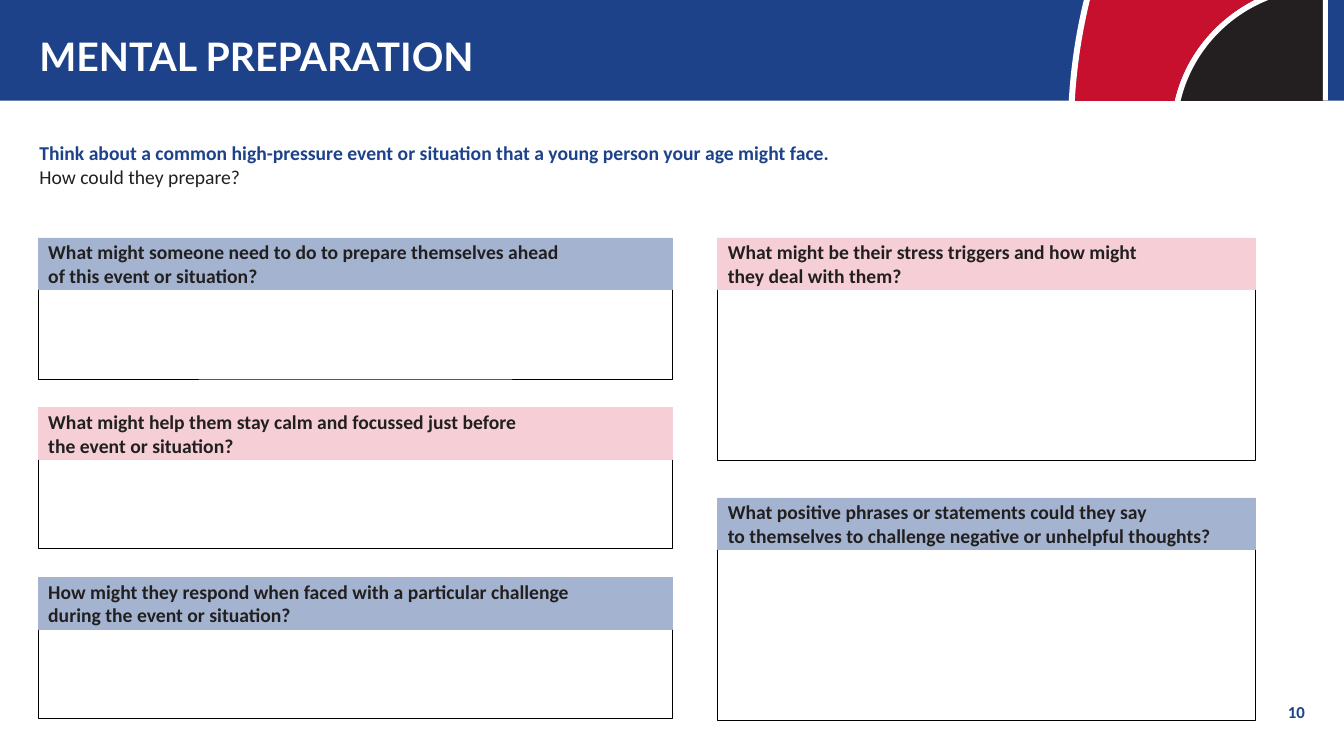
import pptx
import pptx.util
import pptx.dml.color
import pptx.enum.shapes
import pptx.enum.text
import pptx.oxml.ns
import lxml.etree

Inches, Pt = pptx.util.Inches, pptx.util.Pt
ALIGN, ANCHOR = pptx.enum.text.PP_ALIGN, pptx.enum.text.MSO_ANCHOR
qn = pptx.oxml.ns.qn

COLOURS = {
    "navy": "1D428A", "red": "C7102E", "black": "231F20", "white": "FFFFFF",
    "blue": "A4B4D0", "pink": "F5CFD5", "ink": "221F20", "outline": "000000",
}
SLIDE_WIDTH, SLIDE_HEIGHT = 13.33, 7.5
BAND_HEIGHT = 1
INDENT = 0.39
HEADER_HEIGHT = 0.51

# Each column: left, width, first and last header top, answer height, questions
COLUMNS = [
    (0.38, 6.29, 2.36, 5.73, 0.89, [
        ("blue", ["What might someone need to do to prepare themselves ahead ",
                  "of this event or situation?"]),
        ("pink", ["What might help them stay calm and focussed just before ",
                  "the event or situation?"]),
        ("blue", ["How might they respond when faced with a particular challenge ",
                  "during the event or situation?"]),
    ]),
    (7.12, 5.33, 2.36, 4.94, 1.7, [
        ("pink", ["What might be their stress triggers and how might ",
                  "they deal with them?"]),
        ("blue", ["What positive phrases or statements could they say ",
                  "to themselves to challenge negative or unhelpful thoughts?"]),
    ]),
]


def rgb(name):
    return pptx.dml.color.RGBColor.from_string(COLOURS[name])


def paint(shape, fill, line=None):
    shape.shadow.inherit = False
    shape.fill.solid()
    shape.fill.fore_color.rgb = rgb(fill)
    if line:
        shape.line.color.rgb = rgb(line)
        shape.line.width = Pt(0.5)
    else:
        shape.line.fill.background()


def add_box(page, left, top, width, height, fill, line=None):
    box = page.shapes.add_shape(
        pptx.enum.shapes.MSO_SHAPE.RECTANGLE,
        Inches(left), Inches(top), Inches(width), Inches(height))
    paint(box, fill, line)
    return box


def place(shape, left, top, width, height):
    shape.left, shape.top = Inches(left), Inches(top)
    shape.width, shape.height = Inches(width), Inches(height)


def set_frame(shape, anchor, left, top, right, bottom):
    frame = shape.text_frame
    frame.word_wrap = True
    frame.auto_size = pptx.enum.text.MSO_AUTO_SIZE.NONE
    frame.vertical_anchor = anchor
    frame.margin_left, frame.margin_top = Inches(left), Inches(top)
    frame.margin_right, frame.margin_bottom = Inches(right), Inches(bottom)
    return frame


def add_span(para, text, size, colour, bold=True, font="Calibri"):
    span = para.add_run()
    span.text = text
    span.font.name, span.font.size = font, Pt(size)
    span.font.bold = bold
    span.font.color.rgb = rgb(colour)


def shift(points, distance):
    return [(x + distance, y) for x, y in points]


def bend(shape, segment, points):
    """Turn a straight segment into a cubic curve through the given points."""
    cubic = lxml.etree.Element(qn("a:cubicBezTo"))
    for x, y in points:
        lxml.etree.SubElement(cubic, qn("a:pt"), x=str(Inches(x) - shape.left),
                              y=str(Inches(y) - shape.top))
    segment.getparent().replace(segment, cubic)


def add_sweep(page, left_edge, right_edge, fill):
    """Fill the area between two edges that both run from top to bottom."""
    corners = [left_edge[0], left_edge[-1], right_edge[-1], right_edge[0]]
    outline = [(Inches(x), Inches(y)) for x, y in corners]
    builder = page.shapes.build_freeform(*outline[0], scale=1.0)
    builder.add_line_segments(outline[1:], close=True)
    sweep = builder.convert_to_shape()
    segments = list(sweep.element.iter(qn("a:lnTo")))
    for segment, edge in ((segments[0], left_edge), (segments[2], right_edge[::-1])):
        if len(edge) == 4:
            bend(sweep, segment, edge[1:])
    paint(sweep, fill)


def add_band(page):
    add_box(page, 0, 0, SLIDE_WIDTH, BAND_HEIGHT, "navy")
    # Curved edges: top, two control points, bottom
    outer = [(10.81, 0), (10.73, 0.33), (10.68, 0.66), (10.66, 1)]
    middle = [(12.44, 0), (12.05, 0.2), (11.75, 0.56), (11.65, 1)]
    inner = [(12.58, 0), (12.15, 0.17), (11.82, 0.54), (11.71, 1)]
    add_sweep(page, shift(inner, -0.04), [(13.17, 0), (13.17, 1)], "black")
    add_sweep(page, middle, inner, "white")
    add_sweep(page, outer, middle, "red")
    add_sweep(page, shift(outer, -0.06), outer, "white")
    add_box(page, 13.12, 0, 0.05, BAND_HEIGHT, "white")


def fill_title(page):
    title = page.shapes.title
    page.shapes.element.append(title.element)  # bring in front of the band
    place(title, 0, 0.23, 10.59, 0.77)
    para = set_frame(title, ANCHOR.MIDDLE, INDENT, 0, 0, 0).paragraphs[0]
    para.alignment = ALIGN.LEFT
    para.line_spacing = Pt(25)
    add_span(para, "MENTAL PREPARATION", 28, "white", font="Lato")


def fill_intro(page):
    body = page.placeholders[1]
    page.shapes.element.append(body.element)
    place(body, 0, BAND_HEIGHT, 12.76, 1.26)
    frame = set_frame(body, ANCHOR.TOP, INDENT, 0.4, 0, 0)
    lines = [
        ("Think about a common high-pressure event or situation that a young "
         "person your age might face.", "navy", True),
        ("How could they prepare?", "black", False),
    ]
    for number, (text, colour, bold) in enumerate(lines):
        para = frame.add_paragraph() if number else frame.paragraphs[0]
        properties = para._p.get_or_add_pPr()
        properties.set("marL", "0")
        properties.set("indent", "0")
        lxml.etree.SubElement(properties, qn("a:buNone"))
        para.space_before = Pt(0)
        add_span(para, text, 14, colour, bold)


def add_question(page, left, top, width, answer_height, colour, lines):
    add_box(page, left, top + HEADER_HEIGHT, width, answer_height, "white", "outline")
    header = add_box(page, left, top, width, HEADER_HEIGHT, colour, colour)
    para = set_frame(header, ANCHOR.MIDDLE, 0.1, 0.1, 0.1, 0.1).paragraphs[0]
    para.alignment = ALIGN.LEFT
    for number, text in enumerate(lines):
        if number:
            para.add_line_break()
        add_span(para, text, 14, "ink")


def add_page_number(page, number):
    box = page.shapes.add_textbox(
        Inches(12.16), Inches(6.86), Inches(0.88), Inches(0.4))
    para = set_frame(box, ANCHOR.MIDDLE, 0.1, 0.05, 0.1, 0.05).paragraphs[0]
    para.alignment = ALIGN.RIGHT
    add_span(para, number, 12, "navy")


def main():
    deck = pptx.Presentation()
    deck.slide_width, deck.slide_height = Inches(SLIDE_WIDTH), Inches(SLIDE_HEIGHT)
    page = deck.slides.add_slide(deck.slide_layouts[1])

    # Header band, title and introduction
    add_band(page)
    fill_title(page)
    fill_intro(page)
    add_page_number(page, "10")

    # Questions, evenly spaced down each column
    for left, width, first, last, answer_height, questions in COLUMNS:
        pitch = (last - first) / (len(questions) - 1)
        for row, (colour, lines) in enumerate(questions):
            add_question(page, left, first + row * pitch, width,
                         answer_height, colour, lines)

    deck.save("out.pptx")


if __name__ == "__main__":
    main()
